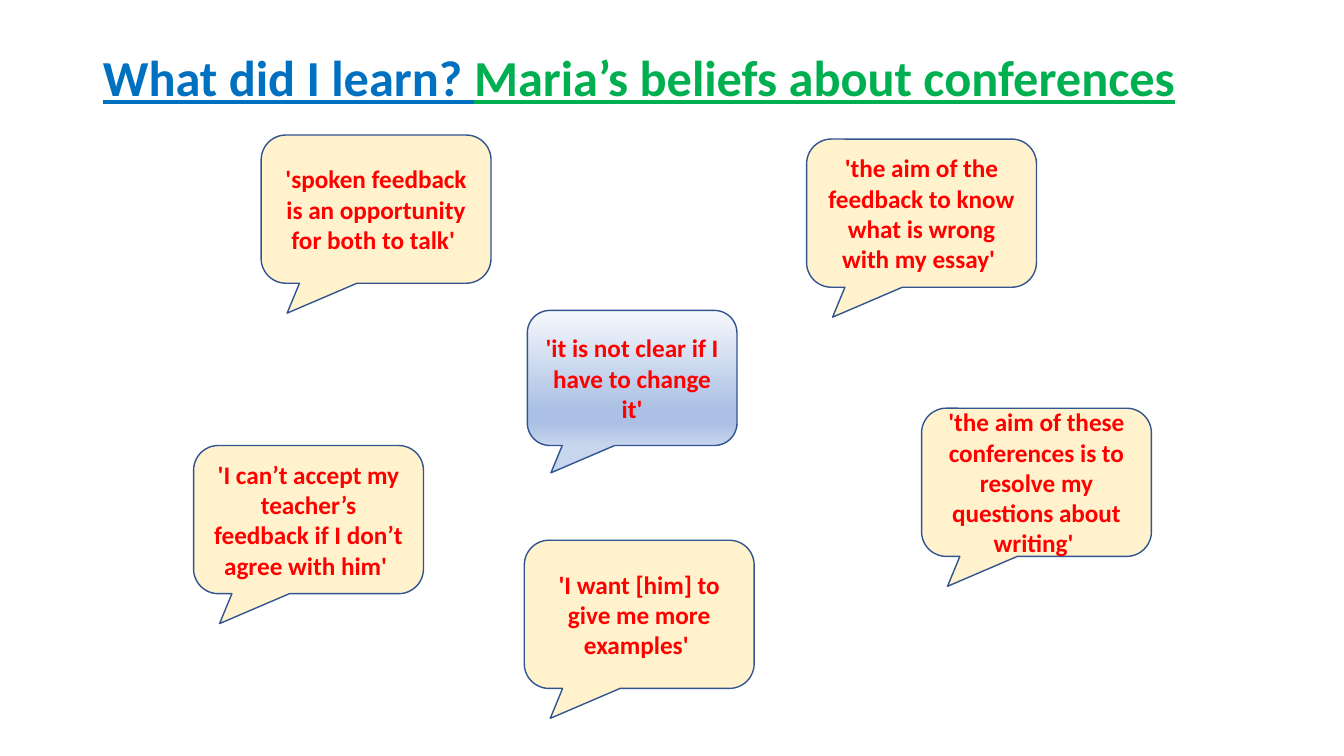
import dataclasses

import lxml.etree
import pptx
import pptx.dml.color
import pptx.enum.shapes
import pptx.enum.text
import pptx.oxml.ns
import pptx.util
from pptx.util import Inches


@dataclasses.dataclass(frozen=True)
class Theme:
    font: str = "Calibri"
    title_size: int = 36
    quote_size: int = 18
    question: str = "0070C0"
    topic: str = "00B050"
    quote: str = "FF0000"
    bubble: str = "FFF2CC"
    outline: str = "325491"
    gradient: tuple = ((0, "F6F8FC"), (74, "ABC0E4"), (83, "ABC0E4"), (100, "C7D5ED"))


THEME = Theme()
BUBBLE_SIZE = (2.28, 1.47)
CENTRE_SIZE = (2.08, 1.34)
BUBBLE_ADJUSTMENTS = (-0.387, 0.702, 0.167)

BELIEFS = (
    (2.59, 1.34, "'spoken feedback is an opportunity for both to talk' "),
    (8, 1.38, "'the aim of the feedback to know what is wrong with my essay' "),
    (9.14, 4.05, "'the aim of these conferences is to resolve my questions about writing' "),
    (1.92, 4.42, "'I can’t accept my teacher’s feedback if I don’t agree with him' "),
    (5.2, 5.36, "'I want [him] to give me more examples' "),
)


def rgb(value):
    return pptx.dml.color.RGBColor.from_string(value)


def format_run(run, size, color):
    run.font.name = THEME.font
    run.font.size = pptx.util.Pt(size)
    run.font.bold = True
    run.font.color.rgb = rgb(color)


def set_title(slide, parts):
    title = slide.shapes.title
    title.left, title.top = Inches(0.92), Inches(0.4)
    title.width, title.height = Inches(11.5), Inches(0.8)
    frame = title.text_frame
    frame.auto_size = pptx.enum.text.MSO_AUTO_SIZE.NONE
    frame.vertical_anchor = pptx.enum.text.MSO_ANCHOR.MIDDLE
    paragraph = frame.paragraphs[0]
    paragraph.alignment = pptx.enum.text.PP_ALIGN.LEFT
    paragraph.line_spacing = 0.9
    for text, color in parts:
        run = paragraph.add_run()
        run.text = text
        format_run(run, THEME.title_size, color)
        run.font.underline = True


def add_bubble(slide, left, top, text, size=BUBBLE_SIZE):
    width, height = size
    bubble = slide.shapes.add_shape(
        pptx.enum.shapes.MSO_SHAPE.ROUNDED_RECTANGULAR_CALLOUT,
        Inches(left), Inches(top), Inches(width), Inches(height),
    )
    for index, value in enumerate(BUBBLE_ADJUSTMENTS):
        bubble.adjustments[index] = value
    bubble.shadow.inherit = False
    bubble.fill.solid()
    bubble.fill.fore_color.rgb = rgb(THEME.bubble)
    bubble.line.color.rgb = rgb(THEME.outline)
    bubble.line.width = pptx.util.Pt(1)
    frame = bubble.text_frame
    frame.text = text
    frame.word_wrap = True
    frame.vertical_anchor = pptx.enum.text.MSO_ANCHOR.MIDDLE
    paragraph = frame.paragraphs[0]
    paragraph.alignment = pptx.enum.text.PP_ALIGN.CENTER
    format_run(paragraph.runs[0], THEME.quote_size, THEME.quote)
    return bubble


def apply_gradient(shape, stops):
    qualified = pptx.oxml.ns.qn
    shape.fill.gradient()
    shape.fill.gradient_angle = 270
    stop_list = shape.element.spPr.find(qualified("a:gradFill")).find(qualified("a:gsLst"))
    for stop in list(stop_list):
        stop_list.remove(stop)
    for position, color in stops:
        stop = lxml.etree.SubElement(stop_list, qualified("a:gs"), pos=str(position * 1000))
        lxml.etree.SubElement(stop, qualified("a:srgbClr"), val=color)


def main():
    presentation = pptx.Presentation()
    presentation.slide_width = Inches(13.33)
    presentation.slide_height = Inches(7.5)
    slide = presentation.slides.add_slide(presentation.slide_layouts.get_by_name("Title Only"))
    set_title(slide, (
        ("What did I learn? ", THEME.question),
        ("Maria’s beliefs about conferences", THEME.topic),
    ))
    for left, top, text in BELIEFS:
        add_bubble(slide, left, top, text)
    centre = add_bubble(slide, 5.23, 3.08, "'it is not clear if I have to change it'", CENTRE_SIZE)
    apply_gradient(centre, THEME.gradient)
    presentation.save("out.pptx")


if __name__ == "__main__":
    main()
